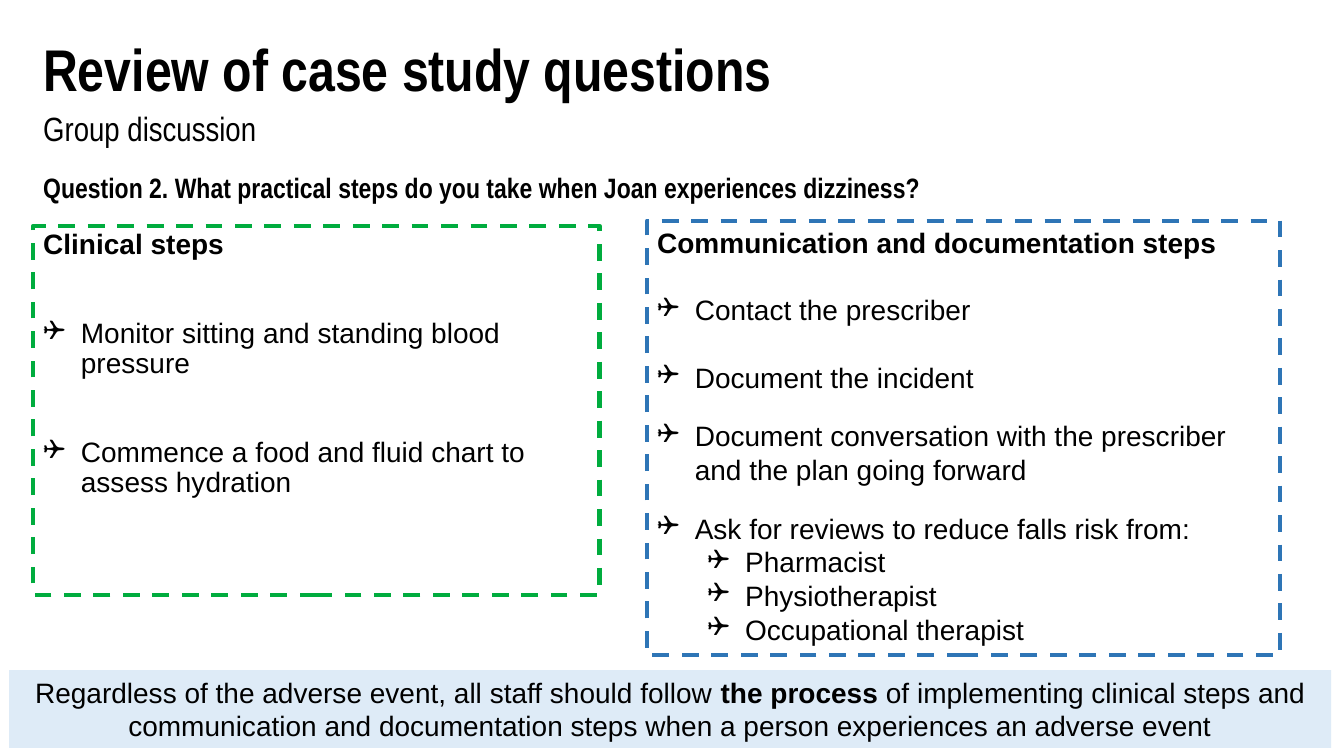
from lxml import etree
from pptx import Presentation
from pptx.dml.color import RGBColor
from pptx.enum.dml import MSO_LINE
from pptx.enum.shapes import MSO_SHAPE
from pptx.enum.text import MSO_ANCHOR, PP_ALIGN
from pptx.oxml.ns import qn
from pptx.util import Cm, Pt

RECTANGLE = MSO_SHAPE.RECTANGLE
DASH = MSO_LINE.DASH
TOP = MSO_ANCHOR.TOP
LEFT, CENTER = PP_ALIGN.LEFT, PP_ALIGN.CENTER

COLORS = {
    "text": "000000",
    "clinical": "00AC3E",
    "communication": "2E75B6",
    "summary": "DEEBF7",
}


def style(paragraph, size, font="Arial", bold=False):
    paragraph.font.size = Pt(size)
    paragraph.font.name = font
    paragraph.font.bold = bold
    paragraph.font.color.rgb = RGBColor.from_string(COLORS["text"])


def add_rectangle(left, top, width, height):
    rectangle = slide.shapes.add_shape(RECTANGLE, Cm(left), Cm(top), Cm(width), Cm(height))
    rectangle.shadow.inherit = False
    rectangle.text_frame.word_wrap = True
    rectangle.text_frame.vertical_anchor = TOP
    return rectangle


presentation = Presentation()
presentation.slide_width = Cm(33.87)
presentation.slide_height = Cm(19.05)
slide = presentation.slides.add_slide(presentation.slide_layouts[6])

headings = [
    ("Review of case study questions", 0.91, 28.14, 2.06, 42, True),
    ("Group discussion", 2.72, 20.7, 1.3, 24, False),
    ("Question 2. What practical steps do you take when Joan experiences dizziness?",
     4.27, 30.02, 1.65, 20, True),
]
for text, top, width, height, size, bold in headings:
    heading = slide.shapes.add_textbox(Cm(0.84), Cm(top), Cm(width), Cm(height))
    heading.text_frame.word_wrap = True
    paragraph = heading.text_frame.paragraphs[0]
    paragraph.text = text
    paragraph.line_spacing = 0.9
    style(paragraph, size, "Arial Narrow", bold)

checklists = [
    ("clinical", (0.84, 5.69, 14.27, 9.3), 0.9, "Clinical steps", [
        ("Monitor sitting and standing blood pressure", 0, 41.6),
        ("Commence a food and fluid chart to assess hydration", 0, 41.6),
    ]),
    ("communication", (16.31, 5.56, 15.95, 10.95), 1.0, "Communication and documentation steps", [
        ("Contact the prescriber", 0, 24),
        ("Document the incident", 0, 24),
        ("Document conversation with the prescriber and the plan going forward", 0, 18),
        ("Ask for reviews to reduce falls risk from:", 0, 18),
        ("Pharmacist", 1, 0),
        ("Physiotherapist", 1, 0),
        ("Occupational therapist", 1, 0),
    ]),
]
for color, bounds, line_spacing, title, steps in checklists:
    checklist = add_rectangle(*bounds)
    checklist.fill.background()
    checklist.line.color.rgb = RGBColor.from_string(COLORS[color])
    checklist.line.width = Pt(3)
    checklist.line.dash_style = DASH

    paragraph = checklist.text_frame.paragraphs[0]
    paragraph.text = title
    paragraph.alignment = LEFT
    paragraph.line_spacing = line_spacing
    style(paragraph, 20, bold=True)

    for step, level, gap in steps:
        paragraph = checklist.text_frame.add_paragraph()
        paragraph.text = step
        paragraph.level = level
        paragraph.alignment = LEFT
        paragraph.line_spacing = line_spacing
        paragraph.space_before = Pt(gap)
        properties = paragraph._p.get_or_add_pPr()
        properties.set("marL", str(Cm(0.95 + 1.27 * level)))
        properties.set("indent", str(Cm(-0.95)))
        etree.SubElement(properties, qn("a:buFont"), typeface="Wingdings")
        etree.SubElement(properties, qn("a:buChar"), char="❑")
        style(paragraph, 20)

summary = add_rectangle(0.23, 16.89, 33.32, 1.96)
summary.fill.solid()
summary.fill.fore_color.rgb = RGBColor.from_string(COLORS["summary"])
summary.line.fill.background()
paragraph = summary.text_frame.paragraphs[0]
paragraph.alignment = CENTER
style(paragraph, 20)
for text, bold in [
    ("Regardless of the adverse event, all staff should follow ", False),
    ("the process ", True),
    ("of implementing clinical steps and communication and documentation steps "
     "when a person experiences an adverse event", False),
]:
    run = paragraph.add_run()
    run.text = text
    run.font.bold = bold

presentation.save("out.pptx")
